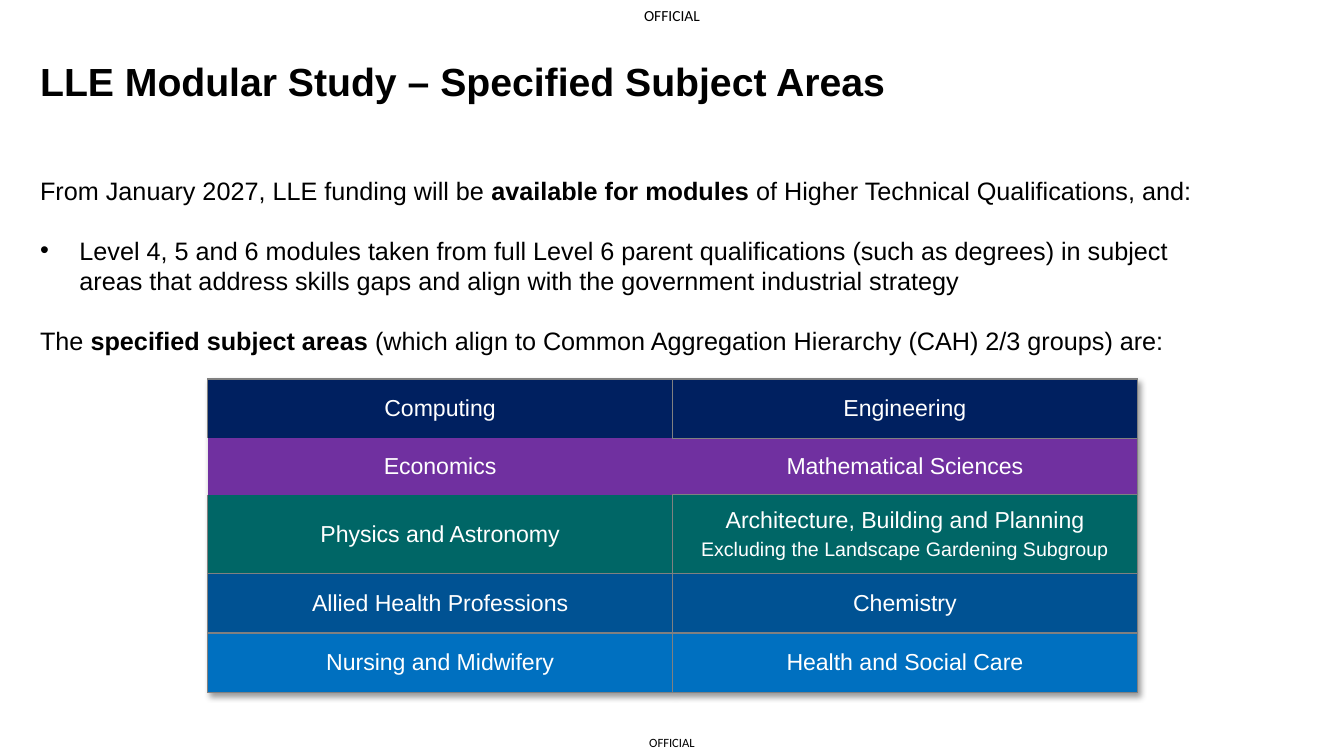
import pptx
import pptx.util
import pptx.dml.color
import pptx.enum.text
import pptx.oxml
import pptx.oxml.ns

MARKINGS = [("OFFICIAL", (6.23, 0, 0.87, 0.31), 11),
            ("OFFICIAL", (6.3, 7.23, 0.73, 0.27), 9)]
TITLE = "LLE Modular Study – Specified Subject Areas"
BODY = [
    (False, [("From January 2027, LLE funding will be ", False),
             ("available for modules ", True),
             ("of Higher Technical Qualifications, and:", False)]),
    (True, [("Level 4, 5 and 6 modules taken from full Level 6 parent qualifications "
             "(such as degrees) in subject areas that address skills gaps and align "
             "with the government industrial strategy", False)]),
    (False, [("The ", False), ("specified subject areas ", True),
             ("(which align to Common Aggregation Hierarchy (CAH) 2/3 groups) are:", False)]),
]
SUBJECTS = [
    (0.59, "002060", ["Computing"], ["Engineering"]),
    (0.56, "7030A0", ["Economics"], ["Mathematical Sciences"]),
    (0.78, "006666", ["Physics and Astronomy"],
     ["Architecture, Building and Planning", "Excluding the Landscape Gardening Subgroup"]),
    (0.59, "005293", ["Allied Health Professions"], ["Chemistry"]),
    (0.59, "0070C0", ["Nursing and Midwifery"], ["Health and Social Care"]),
]
BORDERS = {(0, 0): "LTR", (1, 0): "", (1, 1): "TRB", (2, 0): "LRB"}
COL_WIDTH = 4.61
CENTER = pptx.enum.text.PP_ALIGN.CENTER
MIDDLE = pptx.enum.text.MSO_ANCHOR.MIDDLE
Inches = pptx.util.Inches
Pt = pptx.util.Pt


def rgb(value):
    return pptx.dml.color.RGBColor.from_string(value)


def xml(tag, attrs, inner=""):
    ns = pptx.oxml.ns.nsdecls("a")
    return pptx.oxml.parse_xml(f"<a:{tag} {ns} {attrs}>{inner}</a:{tag}>")


def style(r, size, color="000000", bold=False, name="Arial"):
    r.font.size = Pt(size)
    r.font.name = name
    r.font.bold = bold
    r.font.color.rgb = rgb(color)


def add_box(s, at, anchor, margin=True):
    tf = s.shapes.add_textbox(*map(Inches, at)).text_frame
    tf.word_wrap = margin
    tf.vertical_anchor = anchor
    if not margin:
        tf.margin_left = tf.margin_right = tf.margin_top = tf.margin_bottom = 0
    return tf


def add_body(s):
    tf = add_box(s, (0.3, 1.69, 11.64, 5.05), pptx.enum.text.MSO_ANCHOR.TOP)
    for i, (bullet, parts) in enumerate(BODY):
        p = tf.add_paragraph() if i else tf.paragraphs[0]
        pPr = p._p.get_or_add_pPr()
        pPr.set("marL", str(Inches(0.39)))
        pPr.set("indent", str(-Inches(0.39)))
        if bullet:
            pPr.append(xml("buFont", 'typeface="Arial"'))
            pPr.append(xml("buChar", 'char="•"'))
        else:
            pPr.append(xml("buNone", ""))
        if i:
            p.space_before = Pt(21)
        for text, bold in parts:
            r = p.add_run()
            r.text = text
            style(r, 18, bold=bold)


def fill_cell(cell, lines, color, sides):
    cell.fill.solid()
    cell.fill.fore_color.rgb = rgb(color)
    cell.vertical_anchor = MIDDLE
    tf = cell.text_frame
    tf.text = "\n".join(lines)
    for i, p in enumerate(tf.paragraphs):
        p.alignment = CENTER
        style(p.runs[0], 14 if i else 16.5, "FFFFFF")
    if len(lines) > 1:
        tf.paragraphs[0].space_after = Pt(4)
    tcPr = cell._tc.get_or_add_tcPr()
    gray = '<a:solidFill><a:srgbClr val="808080"/></a:solidFill>'
    for i, side in enumerate("LRTB"):
        line = gray if side in sides else "<a:noFill/>"
        tcPr.insert(i, xml("ln" + side, f'w="{Pt(1)}"', line))


def add_subjects(s):
    height = sum(row[0] for row in SUBJECTS)
    tbl = s.shapes.add_table(len(SUBJECTS), 2, Inches(2.06), Inches(3.76),
                             Inches(2 * COL_WIDTH), Inches(height)).table
    tbl.first_row = tbl.horz_banding = False
    shadow = ('<a:outerShdw blurRad="50800" dist="38100" dir="2700000" algn="tl">'
              '<a:srgbClr val="000000"><a:alpha val="40000"/></a:srgbClr></a:outerShdw>')
    tbl._tbl.tblPr.insert(0, xml("effectLst", "", shadow))
    for col in tbl.columns:
        col.width = Inches(COL_WIDTH)
    for i, (row_height, color, *cells) in enumerate(SUBJECTS):
        tbl.rows[i].height = Inches(row_height)
        for j, lines in enumerate(cells):
            fill_cell(tbl.cell(i, j), lines, color, BORDERS.get((i, j), "LRTB"))


def main():
    prs = pptx.Presentation()
    prs.slide_width, prs.slide_height = Inches(13.33), Inches(7.5)
    s = prs.slides.add_slide(prs.slide_layouts[6])
    for text, at, size in MARKINGS:
        tf = add_box(s, at, MIDDLE, margin=False)
        tf.text = text
        tf.paragraphs[0].alignment = CENTER
        style(tf.paragraphs[0].runs[0], size, name="Calibri")
    tf = add_box(s, (0.3, 0.48, 11.5, 0.71), MIDDLE)
    tf.text = TITLE
    tf.paragraphs[0].line_spacing = 0.9
    style(tf.paragraphs[0].runs[0], 28, bold=True)
    add_body(s)
    add_subjects(s)
    prs.save("out.pptx")


if __name__ == "__main__":
    main()
